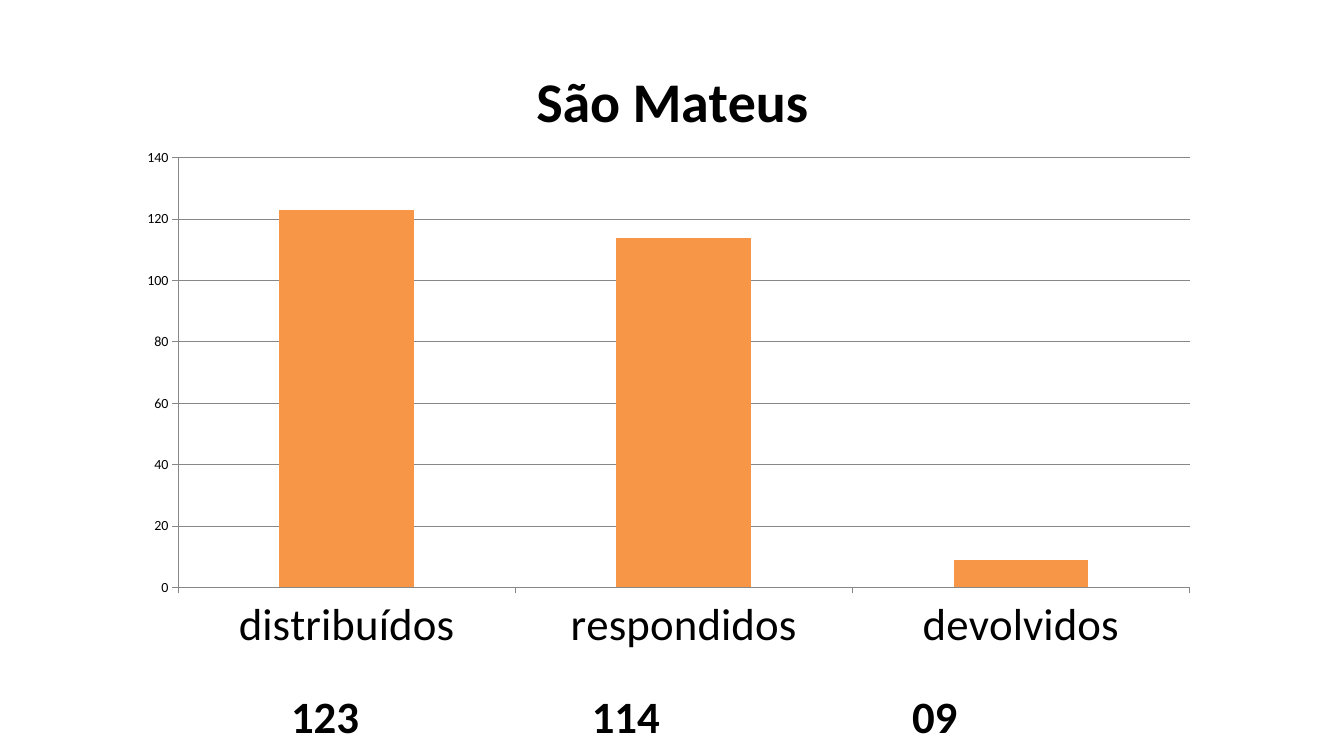
from dataclasses import dataclass

from lxml.etree import SubElement
from pptx import Presentation
from pptx.chart.data import CategoryChartData
from pptx.dml.color import RGBColor
from pptx.enum.chart import XL_CHART_TYPE as ChartType, XL_TICK_MARK as TickMark
from pptx.enum.text import MSO_ANCHOR as Anchor, MSO_AUTO_SIZE as AutoSize, PP_ALIGN as Align
from pptx.oxml.ns import qn
from pptx.util import Cm, Pt


@dataclass(frozen=True)
class Theme:
    font: str = "Calibri"
    ink: RGBColor = RGBColor(0x00, 0x00, 0x00)
    rule: RGBColor = RGBColor(0x87, 0x87, 0x87)
    bar: RGBColor = RGBColor(0xF7, 0x96, 0x46)
    heading: Pt = Pt(40)
    label: Pt = Pt(32)
    scale: Pt = Pt(10)
    rule_width: Pt = Pt(0.75)


THEME = Theme()
PLACE = "São Mateus"
COUNTS = {"distribuídos": 123, "respondidos": 114, "devolvidos": 9}
TAB_STOPS = (Cm(5.38), Cm(12.96), Cm(21.03))


def style_font(font, size, bold=False):
    font.name = THEME.font
    font.size = size
    font.bold = bold
    font.color.rgb = THEME.ink


def style_line(line):
    line.color.rgb = THEME.rule
    line.width = THEME.rule_width


def style_axis(axis, size):
    axis.major_tick_mark = TickMark.OUTSIDE
    axis.minor_tick_mark = TickMark.NONE
    style_line(axis.format.line)
    style_font(axis.tick_labels.font, size)


def set_layout(parent, index, **settings):
    layout = parent.find(qn("c:layout"))
    if layout is not None:
        parent.remove(layout)
    layout = SubElement(parent, qn("c:layout"))
    parent.insert(index, layout)
    manual = SubElement(layout, qn("c:manualLayout"))
    for name, value in settings.items():
        SubElement(manual, qn(f"c:{name}")).set("val", str(value))


def add_heading(chart):
    chart.has_title = True
    chart.chart_title.include_in_layout = False
    run = chart.chart_title.text_frame.paragraphs[0].add_run()
    run.text = PLACE
    style_font(run.font, THEME.heading, bold=True)
    set_layout(chart.chart_title.element, 1, xMode="edge", yMode="edge", x=0.37, y=0.05)


def add_count_chart(slide):
    data = CategoryChartData()
    data.categories = list(COUNTS)
    data.add_series(PLACE, list(COUNTS.values()))
    chart = slide.shapes.add_chart(
        ChartType.COLUMN_CLUSTERED, Cm(3.12), Cm(0.53), Cm(27.41), Cm(16.41), data
    ).chart
    style_font(chart.font, THEME.scale)
    chart.has_legend = False
    add_heading(chart)
    style_axis(chart.category_axis, THEME.label)
    style_axis(chart.value_axis, THEME.scale)
    chart.value_axis.minimum_scale = 0
    chart.value_axis.maximum_scale = 140
    chart.value_axis.major_unit = 20
    style_line(chart.value_axis.major_gridlines.format.line)
    plot = chart.plots[0]
    plot.gap_width = 150
    plot.vary_by_categories = False
    fill = plot.series[0].format.fill
    fill.solid()
    fill.fore_color.rgb = THEME.bar
    set_layout(
        chart.element.find(f".//{qn('c:plotArea')}"), 0, layoutTarget="inner",
        xMode="edge", yMode="edge", x=0.05, y=0.21, w=0.93, h=0.66,
    )


def add_tab_stops(paragraph, positions):
    tabs = SubElement(paragraph._p.get_or_add_pPr(), qn("a:tabLst"))
    for position in positions:
        SubElement(tabs, qn("a:tab"), pos=str(position), algn="l")


def fill_totals(title):
    title.left, title.top, title.width, title.height = Cm(1.7), Cm(16.74), Cm(30.48), Cm(2.59)
    frame = title.text_frame
    frame.auto_size = AutoSize.NONE
    frame.word_wrap = True
    frame.vertical_anchor = Anchor.MIDDLE
    paragraph = frame.paragraphs[0]
    paragraph.alignment = Align.LEFT
    add_tab_stops(paragraph, TAB_STOPS)
    for count in COUNTS.values():
        run = paragraph.add_run()
        run.text = f"\t{count:02d}"
        style_font(run.font, THEME.label, bold=True)


def main():
    presentation = Presentation()
    presentation.slide_width = Cm(33.87)
    presentation.slide_height = Cm(19.05)
    slide = presentation.slides.add_slide(presentation.slide_layouts[5])
    fill_totals(slide.shapes.title)
    add_count_chart(slide)
    presentation.save("out.pptx")


if __name__ == "__main__":
    main()
